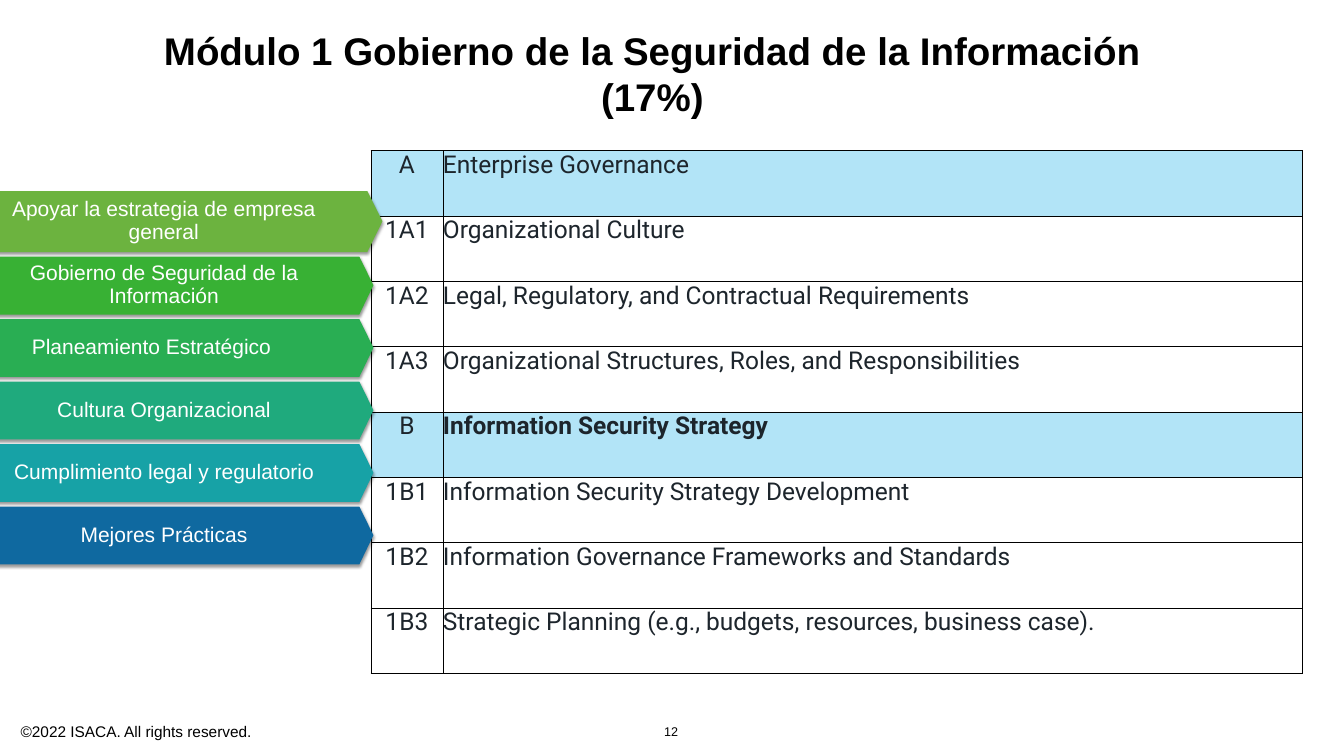
from typing import NamedTuple

from lxml.etree import SubElement
from pptx import Presentation
from pptx.dml.color import RGBColor
from pptx.enum.text import MSO_ANCHOR as Anchor, MSO_AUTO_SIZE as AutoSize, PP_ALIGN as Align
from pptx.oxml.ns import qn
from pptx.util import Emu, Pt

SCALE = 9144
BLACK = RGBColor(0x00, 0x00, 0x00)
WHITE = RGBColor(0xFF, 0xFF, 0xFF)
INK = RGBColor(0x1D, 0x25, 0x2C)
SECTION_BLUE = RGBColor(0xB2, 0xE4, 0xF7)
LIME = RGBColor(0x6C, 0xB3, 0x3F)
GREEN = RGBColor(0x38, 0xB1, 0x34)
EMERALD = RGBColor(0x29, 0xAE, 0x53)
JADE = RGBColor(0x1F, 0xAA, 0x7D)
TEAL = RGBColor(0x17, 0xA2, 0xA6)
BLUE = RGBColor(0x0F, 0x69, 0xA0)


class Box(NamedTuple):
    left: int
    top: int
    width: int
    height: int


class Banner(NamedTuple):
    text: str
    color: RGBColor
    box: Box
    label_shift: int = 0


class Topic(NamedTuple):
    code: str
    name: str
    section: bool = False
    bold: bool = False


def lower_banner(row: int) -> Box:
    """Return the place of a banner below the first one."""
    return Box(-90, 509 + 124 * row, 831, 115)


BANNERS = [
    Banner("Apoyar la estrategia de empresa general", LIME, Box(-109, 379, 868, 121)),
    Banner("Gobierno de Seguridad de la Información", GREEN, lower_banner(0)),
    Banner("Planeamiento Estratégico", EMERALD, lower_banner(1), -25),
    Banner("Cultura Organizacional", JADE, lower_banner(2)),
    Banner("Cumplimiento legal y regulatorio", TEAL, lower_banner(3)),
    Banner("Mejores Prácticas", BLUE, lower_banner(4)),
]
TOPICS = [
    Topic("A", "Enterprise Governance", section=True),
    Topic("1A1", "Organizational Culture"),
    Topic("1A2", "Legal, Regulatory, and Contractual Requirements"),
    Topic("1A3", "Organizational Structures, Roles, and Responsibilities"),
    Topic("B", "Information Security Strategy", section=True, bold=True),
    Topic("1B1", "Information Security Strategy Development"),
    Topic("1B2", "Information Governance Frameworks and Standards"),
    Topic("1B3", "Strategic Planning (e.g., budgets, resources, business case)."),
]


def px(length: int) -> Emu:
    """Turn px into EMU."""
    return Emu(length * SCALE)


def write(frame, text: str, size: int, color: RGBColor, align=Align.LEFT,
          font: str = "Arial", bold: bool = False, margin: int = 6) -> None:
    """Fill a text frame or cell with one formatted paragraph."""
    holder = getattr(frame, "text_frame", frame)
    holder.text = text
    frame.margin_left = frame.margin_right = px(margin)
    frame.margin_top = frame.margin_bottom = px(margin)
    para = holder.paragraphs[0]
    para.alignment = align
    for span in para.runs:
        span.font.name = font
        span.font.size = Pt(size)
        span.font.bold = bold
        span.font.color.rgb = color


def add_label(shapes, box: Box, text: str, size: int, color: RGBColor,
              align=Align.LEFT, anchor=Anchor.MIDDLE, wrap: bool = False, margin: int = 6):
    """Add a text box and return its frame."""
    frame = shapes.add_textbox(*map(px, box)).text_frame
    write(frame, text, size, color, align, margin=margin)
    frame.word_wrap = wrap
    frame.vertical_anchor = anchor
    return frame


def add_shadow(shape) -> None:
    """Give a shape a soft shadow straight below it."""
    shape.shadow.inherit = False
    effects = shape._element.spPr.find(qn("a:effectLst"))
    shadow = SubElement(effects, qn("a:outerShdw"), blurRad=str(Pt(4)), dist=str(Pt(3)),
                        dir="5400000", algn="ctr", rotWithShape="0")
    color = SubElement(shadow, qn("a:srgbClr"), val=str(BLACK))
    SubElement(color, qn("a:alpha"), val="40000")


def add_banner(shapes, banner: Banner) -> None:
    """Draw a six-sided banner with its label."""
    left, top, width, height = banner.box
    right, bottom, middle = left + width, top + height, top + height // 2
    tip = height // 4
    outline = [(left + tip, top), (right - tip, top), (right, middle),
               (right - tip, bottom), (left + tip, bottom)]
    builder = shapes.build_freeform(px(left), px(middle))
    builder.add_line_segments([(px(x), px(y)) for x, y in outline], close=True)
    shape = builder.convert_to_shape()
    shape.fill.solid()
    shape.fill.fore_color.rgb = banner.color
    shape.line.fill.background()
    add_shadow(shape)
    inset = 80
    label = Box(left + inset + banner.label_shift, top, width - 2 * inset, height)
    frame = add_label(shapes, label, banner.text, 30, WHITE, Align.CENTER, wrap=True, margin=11)
    frame.paragraphs[0].line_spacing = 0.9


def add_borders(cell) -> None:
    """Draw a thin black line on each side of a cell."""
    properties = cell._tc.get_or_add_tcPr()
    for side in ("lnL", "lnR", "lnT", "lnB"):
        line = SubElement(properties, qn(f"a:{side}"), w=str(Pt(1)))
        fill = SubElement(line, qn("a:solidFill"))
        SubElement(fill, qn("a:srgbClr"), val=str(BLACK))


def add_topics(shapes, box: Box, widths: tuple[int, int]) -> None:
    """Build the table of module topics."""
    table = shapes.add_table(len(TOPICS), len(widths), *map(px, box)).table
    table.first_row = table.horz_banding = False
    for column, width in zip(table.columns, widths):
        column.width = px(width)
    for row, topic in zip(table.rows, TOPICS):
        code, name = row.cells
        write(code, topic.code, 35, INK, Align.CENTER, "Roboto", margin=0)
        write(name, topic.name, 35, INK, Align.LEFT, "Roboto", topic.bold, margin=0)
        for cell in (code, name):
            add_borders(cell)
            if topic.section:
                cell.fill.solid()
                cell.fill.fore_color.rgb = SECTION_BLUE
            else:
                cell.fill.background()


def add_title(title, box: Box, text: str) -> None:
    """Place and format the title placeholder."""
    title.left, title.top, title.width, title.height = map(px, box)
    frame = title.text_frame
    write(frame, text, 55, BLACK, Align.CENTER, bold=True)
    frame.word_wrap = True
    frame.auto_size = AutoSize.NONE
    frame.vertical_anchor = Anchor.MIDDLE


def main() -> None:
    """Build and save the deck."""
    deck = Presentation()
    deck.slide_width, deck.slide_height = px(2667), px(1500)
    page = deck.slides.add_slide(deck.slide_layouts[5])
    shapes = page.shapes
    add_title(shapes.title, Box(246, 46, 2097, 198),
              "Módulo 1 Gobierno de la Seguridad de la Información (17%)")
    add_label(shapes, Box(35, 1428, 471, 46), "©2022 ISACA. All rights reserved.", 22, BLACK)
    add_topics(shapes, Box(736, 299, 1848, 1037), (143, 1705))
    add_label(shapes, Box(1312, 1431, 40, 41), "12", 18, BLACK, Align.CENTER, Anchor.BOTTOM)
    banners = shapes.add_group_shape()
    for banner in BANNERS:
        add_banner(banners.shapes, banner)
    deck.save("out.pptx")


if __name__ == "__main__":
    main()
